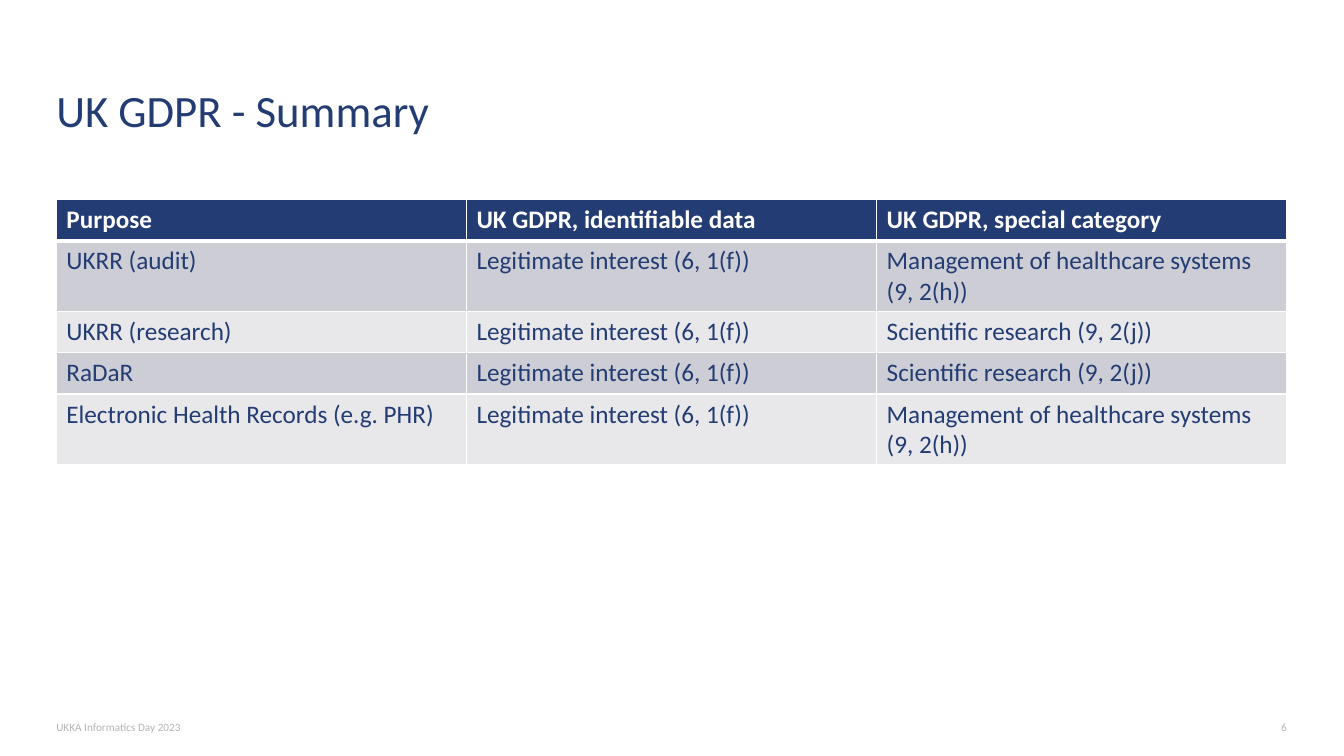
from dataclasses import dataclass

from lxml import etree
from pptx import Presentation
from pptx import util as u
from pptx.dml.color import RGBColor
from pptx.enum import text
from pptx.oxml import ns


@dataclass(frozen=True)
class Theme:
    font: str = "Calibri"
    navy: str = "233C73"
    white: str = "FFFFFF"
    grey: str = "B7B4B3"
    bands: tuple = ("CDCED5", "E8E8EB")
    title_size: int = 32
    table_size: int = 18
    footer_size: int = 8


THEME = Theme()
MARGIN, CONTENT_WIDTH = 1.42, 31.01

HEADINGS = ("Purpose", "UK GDPR, identifiable data", "UK GDPR, special category")
INTEREST = "Legitimate interest (6, 1(f))"
MANAGEMENT = "Management of healthcare systems (9, 2(h))"
RESEARCH = "Scientific research (9, 2(j))"
PURPOSES = (
    ("UKRR (audit)", INTEREST, MANAGEMENT),
    ("UKRR (research)", INTEREST, RESEARCH),
    ("RaDaR", INTEREST, RESEARCH),
    ("Electronic Health Records (e.g. PHR)", INTEREST, MANAGEMENT),
)


def format_runs(paragraph, size, color, bold=False):
    for run in paragraph.runs:
        run.font.name = THEME.font
        run.font.size = u.Pt(size)
        run.font.bold = bold
        run.font.color.rgb = RGBColor.from_string(color)


def add_text(slide, box, words, size, color,
             anchor=text.MSO_ANCHOR.TOP, align=text.PP_ALIGN.LEFT):
    shape = slide.shapes.add_textbox(*map(u.Cm, box))
    frame = shape.text_frame
    frame.word_wrap = True
    frame.vertical_anchor = anchor
    frame.margin_left = frame.margin_right = 0
    frame.margin_top = frame.margin_bottom = 0
    frame.text = words
    paragraph = frame.paragraphs[0]
    paragraph.alignment = align
    format_runs(paragraph, size, color)


def set_borders(cell, **widths):
    """Draw white cell borders; widths are points by side: L, R, T, B."""
    properties = cell._tc.get_or_add_tcPr()
    for index, (side, width) in enumerate(widths.items()):
        line = etree.Element(ns.qn(f"a:ln{side}"), w=str(u.Pt(width)))
        fill = etree.SubElement(line, ns.qn("a:solidFill"))
        etree.SubElement(fill, ns.qn("a:srgbClr"), val=THEME.white)
        properties.insert(index, line)


# Title region
def add_title(slide, box):
    add_text(slide, box, "UK GDPR - Summary", THEME.title_size, THEME.navy,
             anchor=text.MSO_ANCHOR.MIDDLE)


# Table of purposes and their legal bases
def add_purpose_table(slide, box):
    rows = (HEADINGS, *PURPOSES)
    table = slide.shapes.add_table(
        len(rows), len(HEADINGS), *map(u.Cm, box)).table
    for column in table.columns:
        column.width = u.Cm(box[2] / len(HEADINGS))
    for row_index, values in enumerate(rows):
        table.rows[row_index].height = u.Cm(box[3] / len(rows))
        header = row_index == 0
        background = THEME.navy if header else THEME.bands[(row_index - 1) % 2]
        color = THEME.white if header else THEME.navy
        for column_index, value in enumerate(values):
            cell = table.cell(row_index, column_index)
            cell.text = value
            format_runs(cell.text_frame.paragraphs[0], THEME.table_size,
                        color, bold=header)
            cell.fill.solid()
            cell.fill.fore_color.rgb = RGBColor.from_string(background)
            set_borders(cell, L=1, R=1, T=3 if row_index == 1 else 1,
                        B=3 if header else 1)


# Footer region: event on the left, slide number on the right
def add_footer(slide, box):
    left, top, width, height = box
    number_width = 1
    add_text(slide, (left, top, 25, height), "UKKA Informatics Day 2023",
             THEME.footer_size, THEME.grey)
    add_text(slide, (left + width - number_width, top, number_width, height),
             "6", THEME.footer_size, THEME.grey, align=text.PP_ALIGN.RIGHT)


def main():
    presentation = Presentation()
    presentation.slide_width = u.Cm(33.87)
    presentation.slide_height = u.Cm(19.05)
    slide = presentation.slides.add_slide(presentation.slide_layouts[6])
    add_title(slide, (MARGIN, 1.02, 26.5, 3.5))
    add_footer(slide, (MARGIN, 18.14, CONTENT_WIDTH, 0.33))
    add_purpose_table(slide, (MARGIN, 5.03, CONTENT_WIDTH, 5.2))
    presentation.save("out.pptx")


if __name__ == "__main__":
    main()
